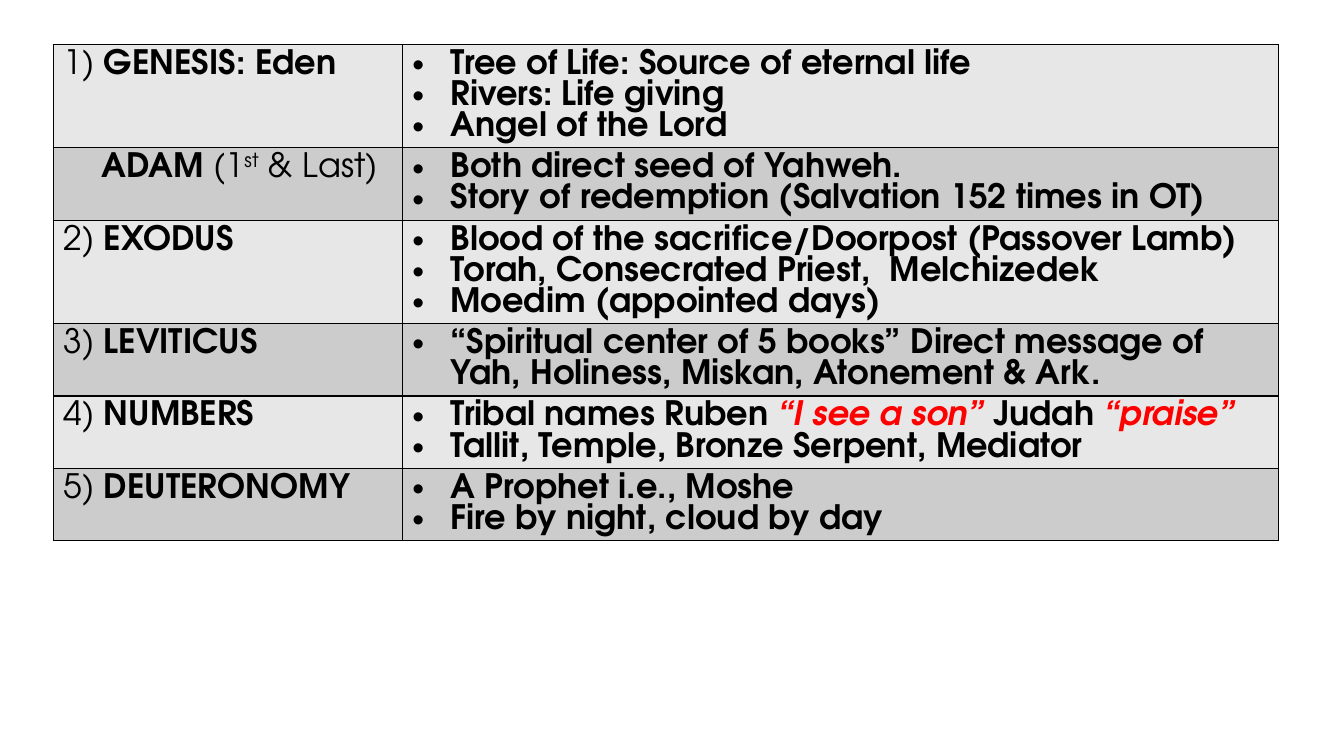
from dataclasses import dataclass

from lxml.etree import SubElement
from pptx import Presentation
from pptx.dml.color import RGBColor
from pptx.dml.fill import FillFormat
from pptx.oxml.ns import qn
from pptx.table import _Cell
from pptx.text.text import _Paragraph
from pptx.util import Inches, Pt

BLACK = "000000"
RED = "FF0000"
BAND_FILLS = ("E7E7E7", "CCCCCC")
COLUMN_WIDTHS = (3.46, 8.69)
ROW_HEIGHT = 0.41
TABLE_HEIGHT = 6.2
INDENT = 0.38
BORDER_SIDES = ("a:lnL", "a:lnR", "a:lnT", "a:lnB")
BASE_FORMAT = {"name": "TeX Gyre Adventor", "size": Pt(24), "italic": False}


@dataclass(frozen=True)
class TextPiece:
    text: str
    bold: bool = True
    italic: bool = False
    color: str = BLACK
    superscript: bool = False


@dataclass(frozen=True)
class BookRow:
    heading: tuple[TextPiece, ...]
    points: tuple[tuple[TextPiece, ...], ...]
    heading_indent: float = 0


def plain(text: str) -> TextPiece:
    return TextPiece(text, bold=False)


def quote(text: str) -> TextPiece:
    return TextPiece(text, italic=True, color=RED)


def numbered(number: int, title: str) -> tuple[TextPiece, ...]:
    return plain(f"{number}) "), TextPiece(title)


def points(*lines: str) -> tuple[tuple[TextPiece, ...], ...]:
    return tuple((TextPiece(line),) for line in lines)


BOOK_ROWS = (
    BookRow(
        numbered(1, "GENESIS: Eden"),
        points("Tree of Life: Source of eternal life", "Rivers: Life giving", "Angel of the Lord"),
    ),
    BookRow(
        (
            TextPiece("ADAM"),
            plain(" (1"),
            TextPiece("st", bold=False, superscript=True),
            plain(" & Last)"),
        ),
        points("Both direct seed of Yahweh.", "Story of redemption (Salvation 152 times in OT)"),
        heading_indent=INDENT,
    ),
    BookRow(
        numbered(2, "EXODUS"),
        points(
            "Blood of the sacrifice/Doorpost (Passover Lamb)",
            "Torah, Consecrated Priest,  Melchizedek",
            "Moedim (appointed days)",
        ),
    ),
    BookRow(
        numbered(3, "LEVITICUS"),
        points("“Spiritual center of 5 books” Direct message of Yah, Holiness, Miskan, Atonement & Ark."),
    ),
    BookRow(
        numbered(4, "NUMBERS"),
        (
            (
                TextPiece("Tribal names Ruben "),
                quote("“I see a son” "),
                TextPiece("Judah "),
                quote("“praise”"),
            ),
            *points("Tallit, Temple, Bronze Serpent, Mediator"),
        ),
    ),
    BookRow(
        numbered(5, "DEUTERONOMY"),
        points("A Prophet i.e., Moshe", "Fire by night, cloud by day"),
    ),
)


def set_fill(fill: FillFormat, color: str) -> None:
    fill.solid()
    fill.fore_color.rgb = RGBColor.from_string(color)


def write_pieces(paragraph: _Paragraph, pieces: tuple[TextPiece, ...]) -> None:
    for piece in pieces:
        run = paragraph.add_run()
        run.text = piece.text
        run_format = BASE_FORMAT | {"bold": piece.bold, "italic": piece.italic}
        for attribute, value in run_format.items():
            setattr(run.font, attribute, value)
        set_fill(run.font.fill, piece.color)
        if piece.superscript:
            run.font._element.set("baseline", "30000")


def indent_paragraph(paragraph: _Paragraph, left: float, first_line: float = 0) -> None:
    properties = paragraph._p.get_or_add_pPr()
    properties.set("marL", str(Inches(left)))
    properties.set("indent", str(Inches(first_line)))


def add_bullet(paragraph: _Paragraph) -> None:
    indent_paragraph(paragraph, INDENT, -INDENT)
    properties = paragraph._p.get_or_add_pPr()
    SubElement(properties, qn("a:buFont"), typeface="Arial")
    SubElement(properties, qn("a:buChar"), char="•")


def style_cell(cell: _Cell, color: str) -> None:
    properties = cell._tc.get_or_add_tcPr()
    for side in BORDER_SIDES:
        line = SubElement(properties, qn(side), w=str(Pt(1)))
        line_fill = SubElement(line, qn("a:solidFill"))
        SubElement(line_fill, qn("a:srgbClr"), val=BLACK)
    set_fill(cell.fill, color)


def write_heading(cell: _Cell, book: BookRow) -> None:
    paragraph = cell.text_frame.paragraphs[0]
    if book.heading_indent:
        indent_paragraph(paragraph, book.heading_indent)
    write_pieces(paragraph, book.heading)


def write_points(cell: _Cell, book: BookRow) -> None:
    text_frame = cell.text_frame
    for index, pieces in enumerate(book.points):
        paragraph = text_frame.add_paragraph() if index else text_frame.paragraphs[0]
        add_bullet(paragraph)
        write_pieces(paragraph, pieces)


def main() -> None:
    presentation = Presentation()
    presentation.slide_width = Inches(13.33)
    presentation.slide_height = Inches(7.5)
    slide = presentation.slides.add_slide(presentation.slide_layouts[6])
    table_shape = slide.shapes.add_table(
        len(BOOK_ROWS), len(COLUMN_WIDTHS),
        Inches(0.53), Inches(0.44), Inches(sum(COLUMN_WIDTHS)), Inches(TABLE_HEIGHT),
    )
    table = table_shape.table
    for column, width in zip(table.columns, COLUMN_WIDTHS):
        column.width = Inches(width)
    for index, (row, book) in enumerate(zip(table.rows, BOOK_ROWS)):
        row.height = Inches(ROW_HEIGHT)
        heading_cell, points_cell = row.cells
        write_heading(heading_cell, book)
        write_points(points_cell, book)
        for cell in row.cells:
            style_cell(cell, BAND_FILLS[index % len(BAND_FILLS)])
    table_shape.height = Inches(TABLE_HEIGHT)
    presentation.save("out.pptx")


if __name__ == "__main__":
    main()
